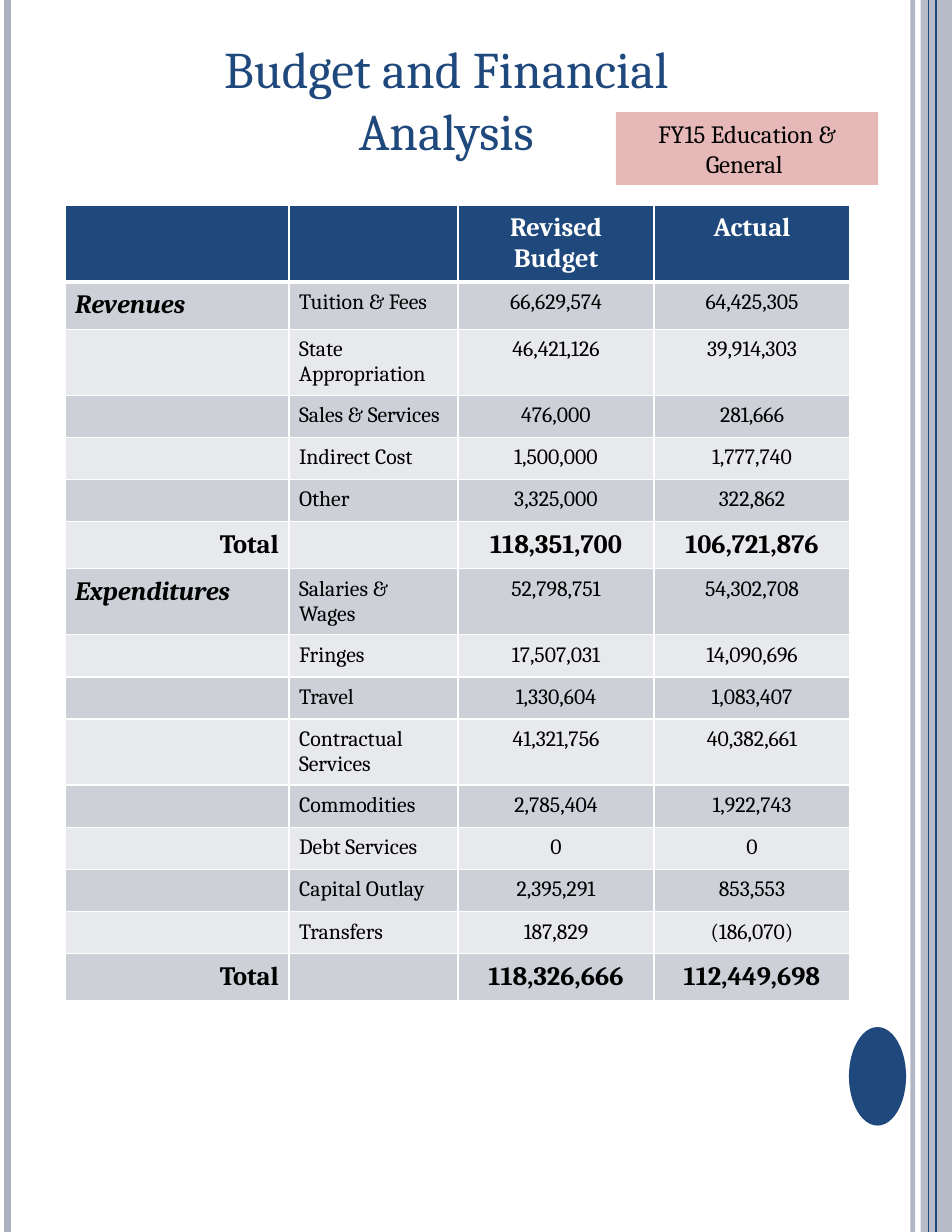
from lxml import etree
from pptx import Presentation
from pptx.dml.color import RGBColor
from pptx.enum.shapes import MSO_CONNECTOR, MSO_SHAPE
from pptx.enum.text import MSO_ANCHOR, MSO_AUTO_SIZE, PP_ALIGN
from pptx.oxml.ns import qn
from pptx.util import Inches, Pt

STRAIGHT = MSO_CONNECTOR.STRAIGHT
RECTANGLE, OVAL = MSO_SHAPE.RECTANGLE, MSO_SHAPE.OVAL
LEFT, CENTER, RIGHT = PP_ALIGN.LEFT, PP_ALIGN.CENTER, PP_ALIGN.RIGHT
TOP, MIDDLE = MSO_ANCHOR.TOP, MSO_ANCHOR.MIDDLE
NO_AUTOFIT = MSO_AUTO_SIZE.NONE

FONT = "Cambria"
PAGE_WIDTH, PAGE_HEIGHT = 8.5, 11
COLORS = {
    "navy": "1F497D",
    "gray": "ACB1BF",
    "pink": "E6B9B8",
    "dark_band": "CDD0D7",
    "light_band": "E8E9EC",
    "white": "FFFFFF",
    "black": "000000",
}
STRIPES = [
    (8.15, "gray", 3, 93),
    (0.07, "gray", 4.5, 100),
    (8.36, "navy", 1.5, 100),
    (8.29, "navy", 0.75, 100),
]
COLUMN_WIDTHS = [2, 1.51, 1.75, 1.75]
HEADER_HEIGHT, HEADING_HEIGHT, WRAPPED_HEIGHT, ROW_HEIGHT = 0.69, 0.42, 0.59, 0.37
WRAPPED_ITEMS = {"State Appropriation", "Salaries & Wages", "Contractual Services"}
BUDGET = [
    ("", "", "Revised Budget", "Actual"),
    ("Revenues", "Tuition & Fees", "66,629,574", "64,425,305"),
    ("", "State Appropriation", "46,421,126", "39,914,303"),
    ("", "Sales & Services", "476,000", "281,666"),
    ("", "Indirect Cost", "1,500,000", "1,777,740"),
    ("", "Other", "3,325,000", "322,862"),
    ("Total", "", "118,351,700", "106,721,876"),
    ("Expenditures", "Salaries & Wages", "52,798,751", "54,302,708"),
    ("", "Fringes", "17,507,031", "14,090,696"),
    ("", "Travel", "1,330,604", "1,083,407"),
    ("", "Contractual Services", "41,321,756", "40,382,661"),
    ("", "Commodities", "2,785,404", "1,922,743"),
    ("", "Debt Services", "0", "0"),
    ("", "Capital Outlay", "2,395,291", "853,553"),
    ("", "Transfers", "187,829", "(186,070)"),
    ("Total", "", "118,326,666", "112,449,698"),
]


def color(name):
    return RGBColor.from_string(COLORS[name])


def set_alpha(element, percent):
    if percent < 100:
        for tint in element.iter(qn("a:srgbClr")):
            etree.SubElement(tint, qn("a:alpha"), val=str(percent * 1000))


def add_stripe(page, x, color_name, width, opacity):
    line = page.shapes.add_connector(
        STRAIGHT, Inches(x), Inches(0), Inches(x), Inches(PAGE_HEIGHT))
    line.line.color.rgb = color(color_name)
    line.line.width = Pt(width)
    properties = line._element.spPr
    set_alpha(properties, opacity)
    etree.SubElement(properties, qn("a:effectLst"))


def add_block(page, kind, bounds, color_name, opacity=100):
    block = page.shapes.add_shape(kind, *map(Inches, bounds))
    block.shadow.inherit = False
    block.fill.solid()
    block.fill.fore_color.rgb = color(color_name)
    block.line.fill.background()
    set_alpha(block._element.spPr, opacity)
    return block


def format_text(para, size, color_name, align=CENTER, bold=False, italic=False):
    para.alignment = align
    for span in para.runs:
        span.font.name = FONT
        span.font.size = Pt(size)
        span.font.color.rgb = color(color_name)
        span.font.bold = bold
        span.font.italic = italic


def fill_frame(box, text, size, color_name, anchor):
    frame = box.text_frame
    frame.text = text
    frame.word_wrap = True
    frame.auto_size = NO_AUTOFIT
    frame.vertical_anchor = anchor
    frame.margin_left = frame.margin_right = Inches(0.11)
    frame.margin_top = frame.margin_bottom = Inches(0.06)
    format_text(frame.paragraphs[0], size, color_name)


def add_title(page):
    title = page.shapes.title
    title.left, title.top = Inches(1.33), Inches(0.33)
    title.width, title.height = Inches(5.31), Inches(1.11)
    title.fill.solid()
    title.fill.fore_color.rgb = color("white")
    fill_frame(title, "Budget and Financial Analysis", 33, "navy", MIDDLE)


def set_borders(cell, top, bottom):
    properties = cell._tc.get_or_add_tcPr()
    for side, width in (("L", 1), ("R", 1), ("T", top), ("B", bottom)):
        line = etree.SubElement(properties, qn(f"a:ln{side}"), w=str(Pt(width)))
        fill = etree.SubElement(line, qn("a:solidFill"))
        etree.SubElement(fill, qn("a:srgbClr"), val=COLORS["white"])


def row_height(index, values):
    if index == 0:
        return HEADER_HEIGHT
    if values[1] in WRAPPED_ITEMS:
        return WRAPPED_HEIGHT
    return HEADING_HEIGHT if values[0] else ROW_HEIGHT


def format_cell(cell, text, row, column):
    header = row == 0
    total = BUDGET[row][0] == "Total"
    heading = column == 0 and not total
    strong = header or total or heading
    set_borders(cell, 3 if row == 1 else 1, 3 if header else 1)
    cell.fill.solid()
    band = "dark_band" if row % 2 else "light_band"
    cell.fill.fore_color.rgb = color("navy" if header else band)
    cell.margin_left = cell.margin_right = Inches(0.09)
    cell.margin_top = cell.margin_bottom = Inches(0.07)
    cell.text = text
    para = cell.text_frame.paragraphs[0]
    if not text:
        etree.SubElement(para._p, qn("a:endParaRPr"), sz="1400")
        return
    align = CENTER if column > 1 else RIGHT if total else LEFT
    format_text(para, 17 if strong else 14, "white" if header else "black",
                align, bold=strong, italic=heading)


def add_budget_table(page):
    heights = [row_height(index, values) for index, values in enumerate(BUDGET)]
    table = page.shapes.add_table(
        len(BUDGET), len(COLUMN_WIDTHS), Inches(0.58), Inches(1.83),
        Inches(sum(COLUMN_WIDTHS)), Inches(sum(heights))).table
    for column, width in zip(table.columns, COLUMN_WIDTHS):
        column.width = Inches(width)
    for row, values in enumerate(BUDGET):
        table.rows[row].height = Inches(heights[row])
        for column, text in enumerate(values):
            format_cell(table.cell(row, column), text, row, column)


def main():
    deck = Presentation()
    deck.slide_width, deck.slide_height = Inches(PAGE_WIDTH), Inches(PAGE_HEIGHT)
    page = deck.slides.add_slide(deck.slide_layouts[5])
    add_block(page, RECTANGLE, (8.22, 0, 0.28, PAGE_HEIGHT), "gray", 87)
    for stripe in STRIPES:
        add_stripe(page, *stripe)
    add_block(page, OVAL, (7.58, 9.17, 0.51, 0.88), "navy")
    add_title(page)
    add_budget_table(page)
    label = add_block(page, RECTANGLE, (5.5, 1, 2.34, 0.65), "pink")
    fill_frame(label, "FY15 Education & General ", 16, "black", TOP)
    deck.save("out.pptx")


if __name__ == "__main__":
    main()
